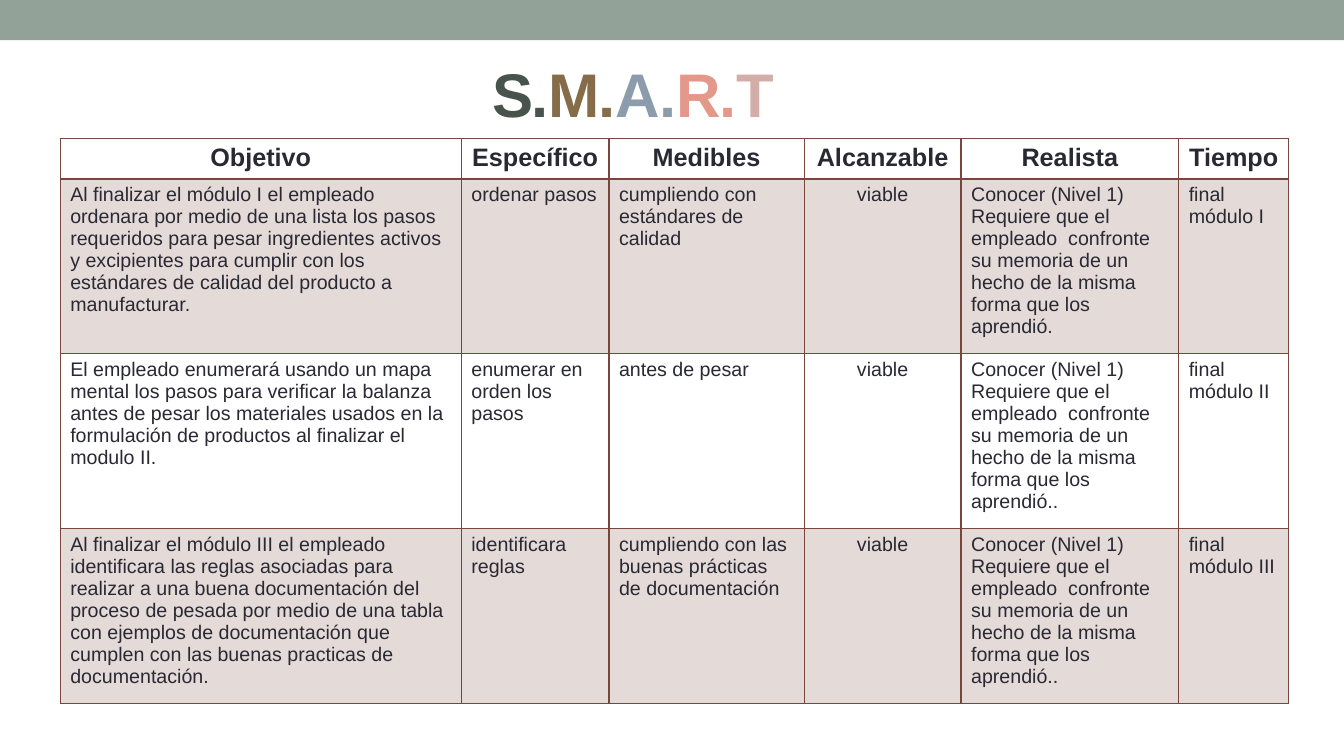
"""Build the S.M.A.R.T. objectives table slide."""
from dataclasses import dataclass

import lxml.etree
import pptx
import pptx.dml.color
import pptx.enum.shapes
import pptx.enum.text
import pptx.oxml.ns
import pptx.util

Pt = pptx.util.Pt
qn = pptx.oxml.ns.qn
RGB = pptx.dml.color.RGBColor.from_string
CENTER = pptx.enum.text.PP_ALIGN.CENTER


@dataclass(frozen=True)
class Theme:
    font: str = "Arial"
    bar: str = "93A299"
    text: str = "292934"
    accent: str = "79463D"
    band_alpha: int = 20
    letters: tuple = ("47534C", "866C49", "8C9CAD", "E4988A", "D3AEA8")
    title_size: int = 44
    header_size: int = 18
    body_size: int = 14


theme = Theme()


def style(r, size, color, bold):
    r.font.name = theme.font
    r.font.size = Pt(size)
    r.font.bold = bold
    r.font.color.rgb = RGB(color)


def add_border(cell, side, width):
    ln = lxml.etree.SubElement(cell._tc.get_or_add_tcPr(), qn(f"a:ln{side}"), w=str(Pt(width)))
    fill = lxml.etree.SubElement(ln, qn("a:solidFill"))
    lxml.etree.SubElement(fill, qn("a:srgbClr"), val=theme.accent)


prs = pptx.Presentation()
prs.slide_width, prs.slide_height = Pt(960), Pt(540)
s = prs.slides.add_slide(prs.slide_layouts[6])

bar = s.shapes.add_shape(pptx.enum.shapes.MSO_SHAPE.RECTANGLE, 0, 0, prs.slide_width, Pt(28.8))
bar.shadow.inherit = False
bar.fill.solid()
bar.fill.fore_color.rgb = RGB(theme.bar)
bar.line.fill.background()

title = s.shapes.add_textbox(Pt(48), Pt(36.5), Pt(808.5), Pt(58))
tf = title.text_frame
tf.word_wrap = True
p = tf.paragraphs[0]
p.alignment = CENTER
for letter, color in zip(("S.", "M.", "A.", "R.", "T"), theme.letters):
    r = p.add_run()
    r.text = letter
    style(r, theme.title_size, color, True)
    r._r.get_or_add_rPr().set("spc", "-100")

level = "Conocer (Nivel 1)\nRequiere que el empleado  confronte su memoria de un hecho de la misma forma que los aprendió."
rows = [
    ("Objetivo", "Específico", "Medibles", "Alcanzable", "Realista", "Tiempo"),
    ("Al finalizar el módulo I el empleado ordenara por medio de una lista los pasos requeridos "
     "para pesar ingredientes activos y excipientes para cumplir con los estándares de calidad "
     "del producto a manufacturar.",
     "ordenar pasos", "cumpliendo con estándares de calidad", "viable", level, "final módulo I"),
    ("El empleado enumerará usando un mapa mental los pasos para verificar la balanza antes de "
     "pesar los materiales usados en la formulación de productos al finalizar el modulo II.",
     "enumerar en orden los pasos", "antes de pesar", "viable", level + ".", "final módulo II"),
    ("Al finalizar el módulo III el empleado identificara las reglas asociadas para realizar a "
     "una buena documentación del proceso de pesada por medio de una tabla con ejemplos de "
     "documentación que cumplen con las buenas practicas de documentación.",
     "identificara reglas", "cumpliendo con las buenas prácticas de documentación", "viable",
     level + ".", "final módulo III"),
]
col_widths = (286.5, 105.5, 139.5, 112, 155.5, 78.5)
row_heights = (27.5, 117.5, 117.5, 117.5)
centered_col = rows[0].index("Alcanzable")

table = s.shapes.add_table(len(rows), len(col_widths), Pt(43), Pt(99),
                           Pt(sum(col_widths)), Pt(sum(row_heights))).table
table.first_row = table.horz_banding = False
for column, width in zip(table.columns, col_widths):
    column.width = Pt(width)
for row, height in zip(table.rows, row_heights):
    row.height = Pt(height)

for i, texts in enumerate(rows):
    header = i == 0
    for j, text in enumerate(texts):
        cell = table.cell(i, j)
        cell.text_frame.text = text
        for side in "LRTB":
            thick = (header and side == "B") or (i == 1 and side == "T")
            add_border(cell, side, 2 if thick else 1)
        if i % 2:
            cell.fill.solid()
            cell.fill.fore_color.rgb = RGB(theme.accent)
            tint = cell._tc.tcPr.find(qn("a:solidFill"))[0]
            lxml.etree.SubElement(tint, qn("a:alpha"), val=str(theme.band_alpha * 1000))
        else:
            cell.fill.background()
        for p in cell.text_frame.paragraphs:
            if header or j == centered_col:
                p.alignment = CENTER
            for r in p.runs:
                style(r, theme.header_size if header else theme.body_size, theme.text, header)

prs.save("out.pptx")
